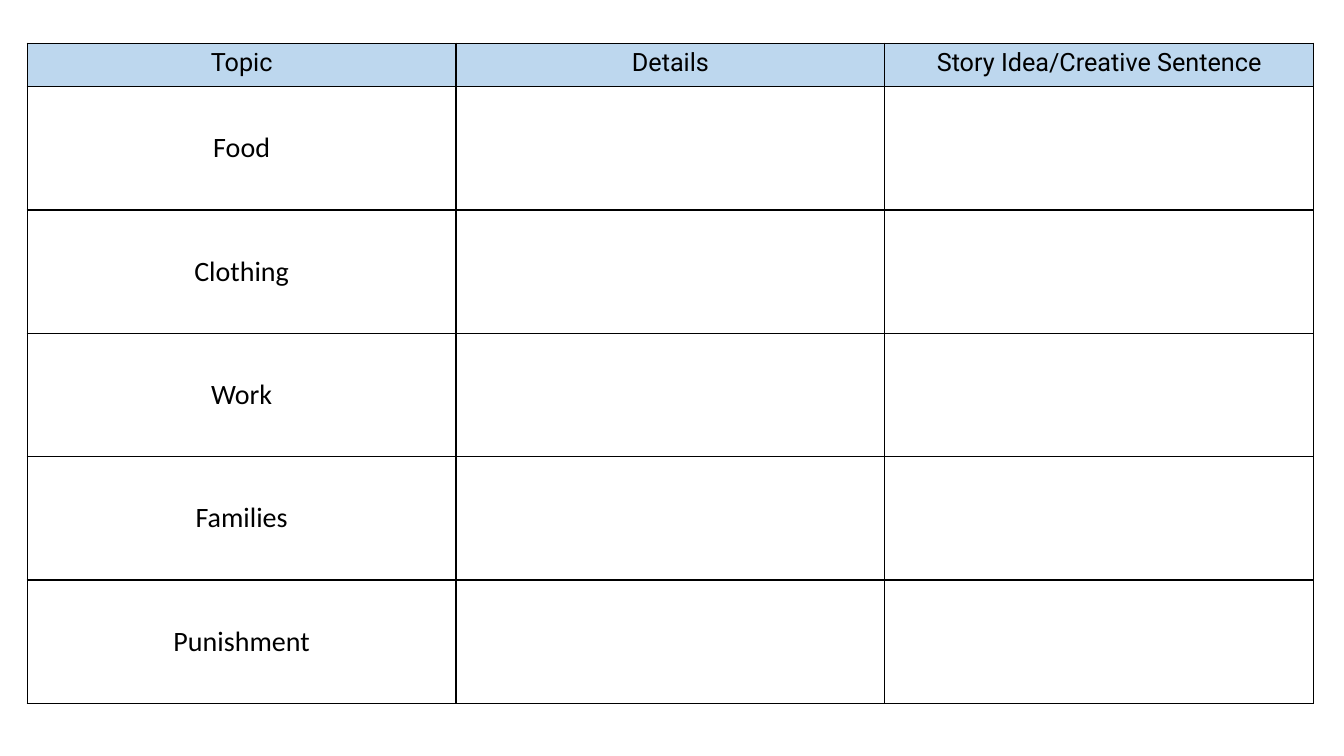
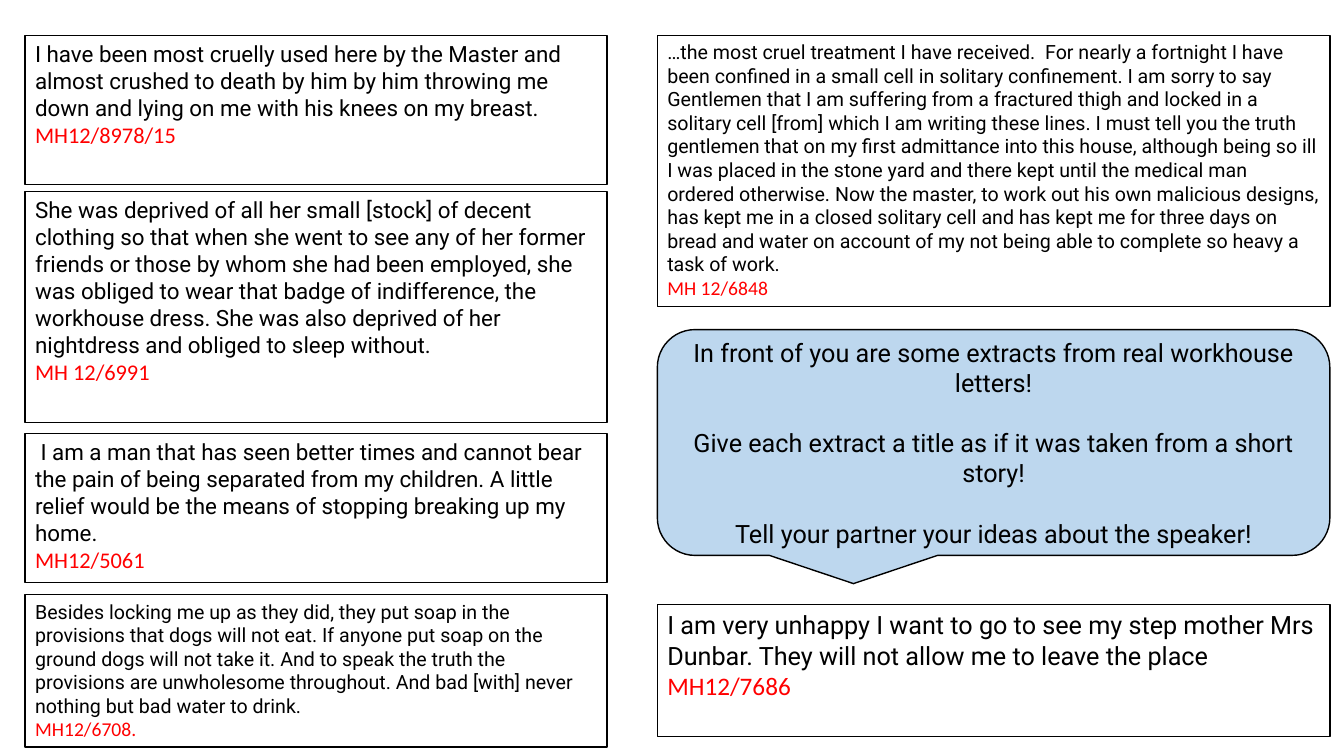
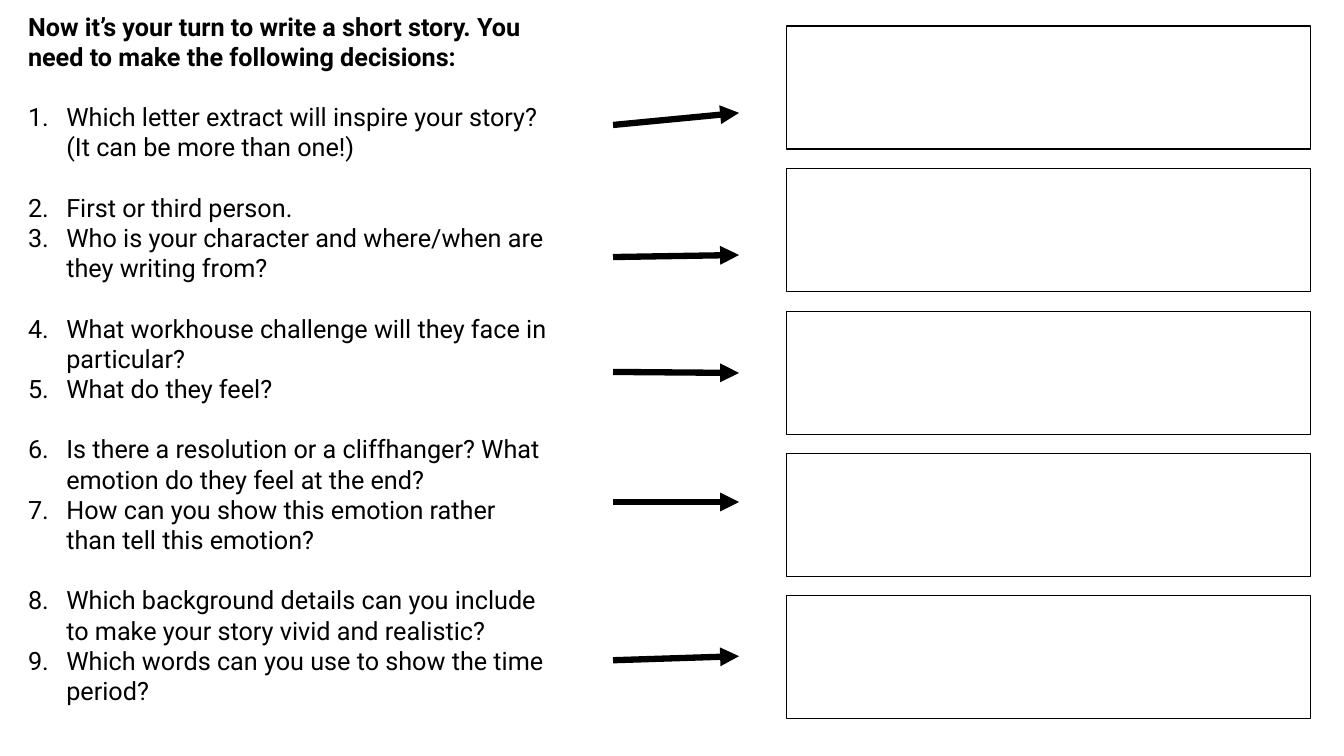
from dataclasses import dataclass

from lxml import etree
from pptx import Presentation
from pptx.dml.color import RGBColor
from pptx.enum.shapes import MSO_CONNECTOR, MSO_SHAPE
from pptx.enum.text import MSO_ANCHOR, PP_ALIGN
from pptx.oxml.ns import qn
from pptx.util import Pt

RECT, CALLOUT = MSO_SHAPE.RECTANGLE, MSO_SHAPE.ROUNDED_RECTANGULAR_CALLOUT
STRAIGHT = MSO_CONNECTOR.STRAIGHT
LEFT, CENTER = PP_ALIGN.LEFT, PP_ALIGN.CENTER
TOP, MIDDLE = MSO_ANCHOR.TOP, MSO_ANCHOR.MIDDLE
EMU_PER_PX = 9144


@dataclass(frozen=True)
class Theme:
    """Colours, fonts and type sizes of the deck."""
    ink: str = "000000"
    paper: str = "FFFFFF"
    band: str = "BDD7EE"
    source: str = "FF0000"
    main: str = "Roboto"
    second: str = "Calibri"
    small: int = 14
    body: int = 16
    large: int = 18
    topic: int = 20
    gap: float = 21.5
    thin: int = 1
    thick: float = 4.5


THEME = Theme()


def px(n):
    """Turn px into EMU."""
    return round(n * EMU_PER_PX)


def rgb(value):
    """Make a colour from a hex string."""
    return RGBColor.from_string(value)


class Deck:
    """Hold the theme and the current slide, and draw elements on it."""

    def __init__(self, theme, width, height):
        self.theme = theme
        self.prs = Presentation()
        self.prs.slide_width, self.prs.slide_height = px(width), px(height)
        self.s = None

    def slide(self):
        """Start a blank slide."""
        self.s = self.prs.slides.add_slide(self.prs.slide_layouts[6])

    def line_of_text(self, p, text, size, align=LEFT, before=0, font=None,
                     color=None, bold=False):
        """Fill a paragraph with one formatted run."""
        for name, value in {"alignment": align, "space_before": Pt(before)}.items():
            setattr(p, name, value)
        r = p.add_run()
        r.text = text
        form = {"name": font or self.theme.main, "size": Pt(size), "bold": bold}
        for name, value in form.items():
            setattr(r.font, name, value)
        r.font.color.rgb = rgb(color or self.theme.ink)

    def paragraphs(self, tf, items, anchor=TOP):
        """Fill a text frame from items, each a dict of paragraph settings."""
        for name, value in {"word_wrap": True, "vertical_anchor": anchor}.items():
            setattr(tf, name, value)
        for i, item in enumerate(items):
            p = tf.add_paragraph() if i else tf.paragraphs[0]
            form = dict(item)
            if form.pop("numbered", False):
                self.number(p)
            self.line_of_text(p, **form)

    def number(self, p):
        """Give a paragraph an automatic number with a hanging indent."""
        pPr = p._p.get_or_add_pPr()
        pPr.set("marL", str(px(38)))
        pPr.set("indent", str(px(-38)))
        etree.SubElement(pPr, qn("a:buFont"), typeface="+mj-lt")
        etree.SubElement(pPr, qn("a:buAutoNum"), type="arabicPeriod")

    def box(self, x, y, w, h, kind=RECT, fill=None, items=(), anchor=TOP):
        """Draw an outlined shape with optional text."""
        sp = self.s.shapes.add_shape(kind, px(x), px(y), px(w), px(h))
        sp.shadow.inherit = False
        sp.fill.solid()
        sp.fill.fore_color.rgb = rgb(fill or self.theme.paper)
        sp.line.color.rgb = rgb(self.theme.ink)
        sp.line.width = Pt(self.theme.thin)
        self.paragraphs(sp.text_frame, items, anchor)

    def extract(self, x, y, w, h, size, text, source):
        """Draw a boxed letter extract with its archive reference."""
        th = self.theme
        self.box(x, y, w, h, items=[
            {"text": text, "size": size},
            {"text": source, "size": size, "font": th.second, "color": th.source}])

    def text(self, x, y, w, h, items):
        """Place a text box."""
        sp = self.s.shapes.add_textbox(px(x), px(y), px(w), px(h))
        self.paragraphs(sp.text_frame, items)

    def arrow(self, x1, y1, x2, y2):
        """Draw a thick arrow."""
        sp = self.s.shapes.add_connector(STRAIGHT, px(x1), px(y1), px(x2), px(y2))
        sp.line.color.rgb = rgb(self.theme.ink)
        sp.line.width = Pt(self.theme.thick)
        spPr = sp._element.spPr
        etree.SubElement(spPr.find(qn("a:ln")), qn("a:tailEnd"), type="triangle")
        etree.SubElement(spPr, qn("a:effectLst"))

    def borders(self, cell):
        """Outline a table cell on all sides."""
        tcPr = cell._tc.get_or_add_tcPr()
        for side in ("lnL", "lnR", "lnT", "lnB"):
            ln = etree.SubElement(tcPr, qn(f"a:{side}"), w=str(Pt(self.theme.thin)))
            fill = etree.SubElement(ln, qn("a:solidFill"))
            etree.SubElement(fill, qn("a:srgbClr"), val=self.theme.ink)

    def table(self, x, y, w, h, head_h, heads, topics):
        """Draw a worksheet table with headings and a topic column."""
        th = self.theme
        table = self.s.shapes.add_table(
            len(topics) + 1, len(heads), px(x), px(y), px(w), px(h)).table
        table.first_row = table.horz_banding = False
        for col in table.columns:
            col.width = px(w / len(heads))
        for i, row in enumerate(table.rows):
            row.height = px((h - head_h) / len(topics) if i else head_h)
            for cell in row.cells:
                self.borders(cell)
                cell.fill.solid()
                cell.fill.fore_color.rgb = rgb(th.paper if i else th.band)
        for j, head in enumerate(heads):
            p = table.cell(0, j).text_frame.paragraphs[0]
            self.line_of_text(p, head, th.large, CENTER)
        for i, topic in enumerate(topics, 1):
            cell = table.cell(i, 0)
            cell.vertical_anchor = MIDDLE
            p = cell.text_frame.paragraphs[0]
            self.line_of_text(p, topic, th.topic, CENTER, font=th.second)


def topics_slide(deck):
    """Build the topic worksheet."""
    deck.slide()
    deck.table(27, 43, 1276, 655, 43,
               ["Topic", "Details", "Story Idea/Creative Sentence"],
               ["Food", "Clothing", "Work", "Families", "Punishment"])


def extracts_slide(deck):
    """Build the page of letter extracts."""
    th = deck.theme
    left, right = (25, 577), (652, 667)
    extracts = [
        (left, 35, 148, th.body,
         "I have been most cruelly used here by the Master and almost crushed to "
         "death by him by him throwing me down and lying on me with his knees on "
         "my breast.", "MH12/8978/15"),
        (left, 190, 229, th.body,
         "She was deprived of all her small [stock] of decent clothing so that when "
         "she went to see any of her former friends or those by whom she had been "
         "employed, she was obliged to wear that badge of indifference, the "
         "workhouse dress. She was also deprived of her nightdress and obliged to "
         "sleep without.", "MH 12/6991"),
        (left, 430, 148, th.body,
         " I am a man that has seen better times and cannot bear the pain of being "
         "separated from my children. A little relief would be the means of "
         "stopping breaking up my home.", "MH12/5061"),
        (left, 590, 151, th.small,
         "Besides locking me up as they did, they put soap in the provisions that "
         "dogs will not eat. If anyone put soap on the ground dogs will not take "
         "it. And to speak the truth the provisions are unwholesome throughout. "
         "And bad [with] never nothing but bad water to drink.", "MH12/6708."),
        (right, 35, 269, th.small,
         "…the most cruel treatment I have received.  For nearly a fortnight I have "
         "been confined in a small cell in solitary confinement. I am sorry to say "
         "Gentlemen that I am suffering from a fractured thigh and locked in a "
         "solitary cell [from] which I am writing these lines. I must tell you the "
         "truth gentlemen that on my first admittance into this house, although "
         "being so ill I was placed in the stone yard and there kept until the "
         "medical man ordered otherwise. Now the master, to work out his own "
         "malicious designs, has kept me in a closed solitary cell and has kept me "
         "for three days on bread and water on account of my not being able to "
         "complete so heavy a task of work.", "MH 12/6848"),
        (right, 600, 131, th.large,
         "I am very unhappy I want to go to see my step mother Mrs Dunbar. They "
         "will not allow me to leave the place", "MH12/7686"),
    ]
    tasks = ["In front of you are some extracts from real workhouse letters!",
             "Give each extract a title as if it was taken from a short story!",
             "Tell your partner your ideas about the speaker!"]
    deck.slide()
    for (x, w), y, h, size, text, source in extracts:
        deck.extract(x, y, w, h, size, text, source)
    x, w = right
    deck.box(x, 327, w, 224, CALLOUT, th.band, anchor=MIDDLE, items=[
        {"text": task, "size": th.large, "align": CENTER,
         "before": th.gap if i else 0} for i, task in enumerate(tasks)])


def story_slide(deck):
    """Build the story planning page."""
    th = deck.theme
    groups = [
        ["Which letter extract will inspire your story? (It can be more than one!)"],
        ["First or third person.",
         "Who is your character and where/when are they writing from?"],
        ["What workhouse challenge will they face in particular?",
         "What do they feel?"],
        ["Is there a resolution or a cliffhanger? What emotion do they feel at the end?",
         "How can you show this emotion rather than tell this emotion?"],
        ["Which background details can you include to make your story vivid and "
         "realistic?",
         "Which words can you use to show the time period?"],
    ]
    items = [{"text": "Now it’s your turn to write a short story. You need to make "
                      "the following decisions:", "size": th.large, "bold": True}]
    items += [{"text": question, "size": th.large, "numbered": True,
               "before": 0 if i else th.gap}
              for group in groups for i, question in enumerate(group)]
    arrows = [(124, 112), (255, 253), (369, 370), (498, 498), (655, 651)]
    deck.slide()
    deck.text(18, 6, 537, 720, items)
    for i, (start, end) in enumerate(arrows):
        deck.arrow(608, start, 733, end)
        deck.box(780, round(26 + 141.3 * i), 520, 122)


def main():
    """Build and save the deck."""
    deck = Deck(THEME, 1333, 750)
    for build in (topics_slide, extracts_slide, story_slide):
        build(deck)
    deck.prs.save("out.pptx")


if __name__ == "__main__":
    main()
